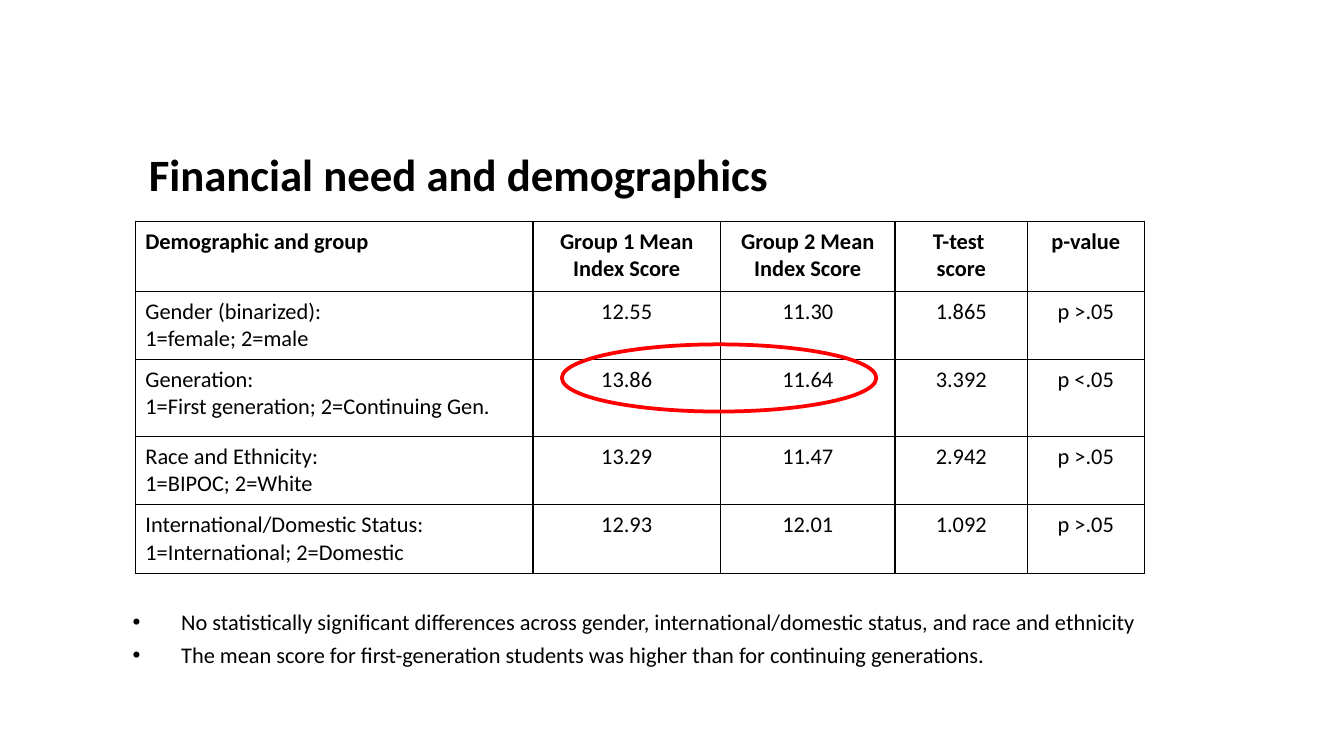
import pptx
import pptx.dml.color
import pptx.enum.shapes
import pptx.enum.text
import pptx.oxml
import pptx.oxml.ns
import pptx.util

Pt = pptx.util.Pt
PP_ALIGN = pptx.enum.text.PP_ALIGN
BLACK = pptx.dml.color.RGBColor(0, 0, 0)
RED = pptx.dml.color.RGBColor(255, 0, 0)

BODY = {"name": "Calibri", "size": Pt(12), "bold": False}
HEADER = {**BODY, "bold": True}
TITLE = {**HEADER, "size": Pt(24)}


def format_text(paragraph, font_format, alignment=PP_ALIGN.LEFT):
    paragraph.alignment = alignment
    for attribute, value in font_format.items():
        setattr(paragraph.font, attribute, value)
    paragraph.font.color.rgb = BLACK


def add_cell_borders(cell):
    properties = cell._tc.get_or_add_tcPr()
    for side in ("lnL", "lnR", "lnT", "lnB"):
        properties.append(pptx.oxml.parse_xml(
            f'<a:{side} {pptx.oxml.ns.nsdecls("a")} w="{Pt(0.75)}"><a:solidFill>'
            f'<a:srgbClr val="{BLACK}"/></a:solidFill></a:{side}>'))


presentation = pptx.Presentation()
presentation.slide_width, presentation.slide_height = Pt(720), Pt(405)
slide = presentation.slides.add_slide(presentation.slide_layouts[5])

# Title
title = slide.shapes.title
title.left, title.top, title.width, title.height = Pt(72.5), Pt(79.5), Pt(514), Pt(27)
title.text_frame.text = "Financial need and demographics"
title.text_frame.vertical_anchor = pptx.enum.text.MSO_ANCHOR.MIDDLE
title.text_frame.auto_size = pptx.enum.text.MSO_AUTO_SIZE.NONE
format_text(title.text_frame.paragraphs[0], TITLE)

# Group comparison table
comparisons = [
    ("Demographic and group", "Group 1 Mean\nIndex Score",
     "Group 2 Mean\nIndex Score", "T-test \nscore", "p-value"),
    ("Gender (binarized):\n1=female; 2=male", "12.55", "11.30", "1.865", "p >.05"),
    ("Generation:\n1=First generation; 2=Continuing Gen.",
     "13.86", "11.64", "3.392", "p <.05"),
    ("Race and Ethnicity:\n1=BIPOC; 2=White", "13.29", "11.47", "2.942", "p >.05"),
    ("International/Domestic Status:\n1=International; 2=Domestic",
     "12.93", "12.01", "1.092", "p >.05"),
]
column_widths = [213, 100.5, 93.5, 71, 62.5]
row_heights = [37.5, 36.75, 41, 36.75, 36.75]

table = slide.shapes.add_table(
    len(row_heights), len(column_widths), Pt(72.5), Pt(118.5),
    Pt(sum(column_widths)), Pt(sum(row_heights))).table
table.horz_banding = False
for column, width in zip(table.columns, column_widths):
    column.width = Pt(width)
for row, height in zip(table.rows, row_heights):
    row.height = Pt(height)

for row_index, comparison in enumerate(comparisons):
    for column_index, wording in enumerate(comparison):
        cell = table.cell(row_index, column_index)
        cell.text = wording
        cell.margin_left = cell.margin_right = Pt(5.4)
        cell.margin_top = cell.margin_bottom = Pt(3.6)
        add_cell_borders(cell)
        cell.fill.background()
        for paragraph in cell.text_frame.paragraphs:
            format_text(paragraph, BODY if row_index else HEADER,
                        PP_ALIGN.CENTER if column_index else PP_ALIGN.LEFT)

# Ring around the significant difference
highlight = slide.shapes.add_shape(
    pptx.enum.shapes.MSO_SHAPE.OVAL, Pt(301), Pt(184.5), Pt(168.5), Pt(36))
highlight.shadow.inherit = False
highlight.fill.background()
highlight.line.color.rgb = RED
highlight.line.width = Pt(2)

# Findings
findings = slide.shapes.add_textbox(Pt(54), Pt(322.5), Pt(612), Pt(40)).text_frame
findings.word_wrap = True
findings.text = (
    "No statistically significant differences across gender, "
    "international/domestic status, and race and ethnicity\n"
    "The mean score for first-generation students was higher than "
    "for continuing generations.")
for index, paragraph in enumerate(findings.paragraphs):
    properties = paragraph._p.get_or_add_pPr()
    properties.set("marL", str(Pt(36)))
    properties.set("indent", str(Pt(-26)))
    for bullet in (f'<a:buClr {pptx.oxml.ns.nsdecls("a")}><a:srgbClr val="{BLACK}"/></a:buClr>',
                   f'<a:buFont {pptx.oxml.ns.nsdecls("a")} typeface="Arial"/>',
                   f'<a:buChar {pptx.oxml.ns.nsdecls("a")} char="•"/>'):
        properties.append(pptx.oxml.parse_xml(bullet))
    format_text(paragraph, BODY)
    if index:
        paragraph.space_before = Pt(3.2)

presentation.save("out.pptx")
